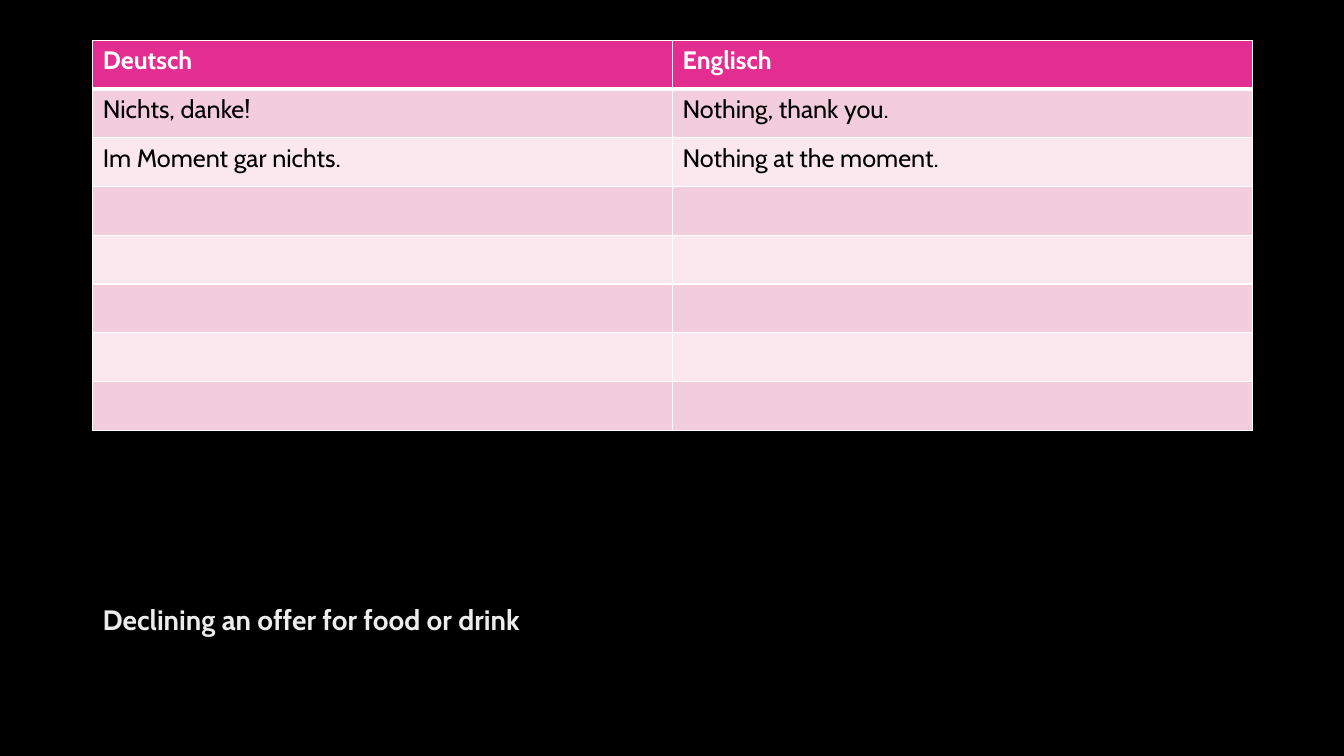
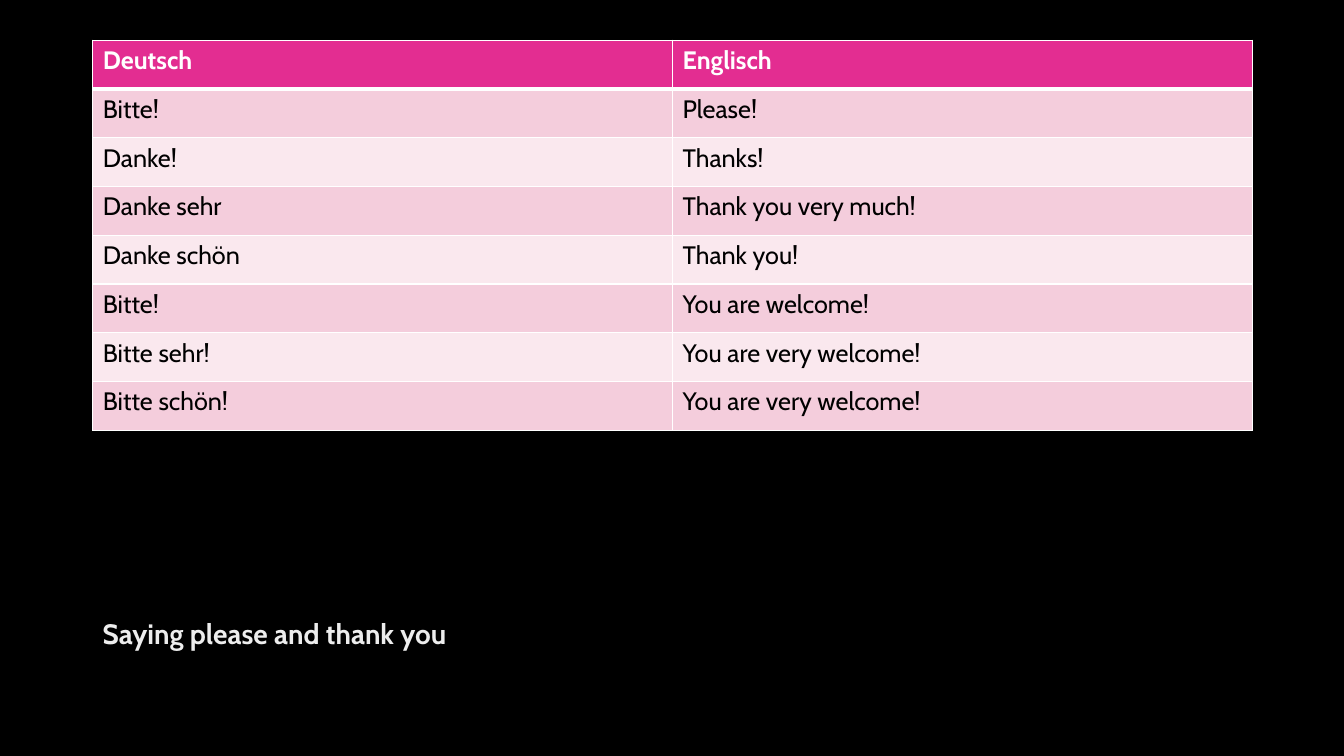
from dataclasses import dataclass

from lxml import etree
from pptx import Presentation
from pptx.dml.color import RGBColor
from pptx.enum.text import MSO_ANCHOR
from pptx.oxml.ns import qn
from pptx.slide import Slide
from pptx.table import _Cell
from pptx.util import Inches, Pt

MIDDLE = MSO_ANCHOR.MIDDLE
FONT = "Cabin"
HUES = {
    "back": "000000", "head": "E32D91", "odd": "F4CDDC", "even": "FAE8EE",
    "light": "FFFFFF", "dark": "000000",
}
FADE = ((0, "DEDEDE"), (34, "EDEDED"), (100, "FFFFFF"))
ANGLE = 80

# Shared grid, in inches
WIDE, HIGH = 13.33, 7.5
LEFT, TOP = 0.92, 0.4
SPAN, DEPTH = 11.5, 3.87
COLS, ROWS = 2, 8
BAND = 0.5
HEAD = ("Deutsch", "Englisch")


@dataclass(frozen=True)
class Lesson:
    title: str
    mid: float  # centre line of the title
    pairs: tuple[tuple[str, str], ...]


LESSONS = (
    Lesson("Declining an offer for food or drink", 6.17, (
        ("Nichts, danke!", "Nothing, thank you."),
        ("Im Moment gar nichts.", "Nothing at the moment."),
    )),
    Lesson("Saying please and thank you", 6.3, (
        ("Bitte!", "Please!"),
        ("Danke!", "Thanks!"),
        ("Danke sehr", "Thank you very much!"),
        ("Danke schön", "Thank you!"),
        ("Bitte!", "You are welcome!"),
        ("Bitte sehr!", "You are very welcome!"),
        ("Bitte schön!", "You are very welcome!"),
    )),
)


def rgb(name: str) -> RGBColor:
    return RGBColor.from_string(HUES[name])


def add_hue(node: etree._Element, code: str) -> None:
    etree.SubElement(node, qn("a:srgbClr"), val=code)


def edge(cell: _Cell, row: int) -> None:
    """Draw white borders, with a heavy rule under the header."""
    props = cell._tc.get_or_add_tcPr()
    sizes = {"L": 1, "R": 1, "T": 3 if row == 1 else 1, "B": 3 if row == 0 else 1}
    for spot, (side, size) in enumerate(sizes.items()):
        line = etree.Element(qn(f"a:ln{side}"), w=str(Pt(size)))
        add_hue(etree.SubElement(line, qn("a:solidFill")), HUES["light"])
        props.insert(spot, line)


def add_grid(slide: Slide, lesson: Lesson) -> None:
    grid = slide.shapes.add_table(
        ROWS, COLS, Inches(LEFT), Inches(TOP), Inches(SPAN), Inches(DEPTH)
    ).table
    lines = (HEAD, *lesson.pairs)
    for row in range(ROWS):
        texts = lines[row] if row < len(lines) else ("",) * COLS
        tone = "head" if row == 0 else "odd" if row % 2 else "even"
        for col, text in enumerate(texts):
            cell = grid.cell(row, col)
            cell.fill.solid()
            cell.fill.fore_color.rgb = rgb(tone)
            edge(cell, row)
            cell.text = text
            font = cell.text_frame.paragraphs[0].font
            font.name, font.size, font.bold = FONT, Pt(18), row == 0
            font.color.rgb = rgb("dark" if row else "light")


def add_title(slide: Slide, lesson: Lesson) -> None:
    box = slide.shapes.add_textbox(
        Inches(LEFT), Inches(lesson.mid - BAND / 2), Inches(SPAN), Inches(BAND)
    )
    frame = box.text_frame
    frame.word_wrap = True
    frame.vertical_anchor = MIDDLE
    para = frame.paragraphs[0]
    para.line_spacing = 0.9
    para.font.name, para.font.size, para.font.bold = FONT, Pt(20), True
    run = para.add_run()
    run.text = lesson.title
    # Gradient lettering
    fill = etree.Element(qn("a:gradFill"))
    stops = etree.SubElement(fill, qn("a:gsLst"))
    for share, code in FADE:
        add_hue(etree.SubElement(stops, qn("a:gs"), pos=str(share * 1000)), code)
    etree.SubElement(fill, qn("a:lin"), ang=str(ANGLE * 60000), scaled="0")
    run._r.get_or_add_rPr().insert(0, fill)


def main() -> None:
    deck = Presentation()
    deck.slide_width, deck.slide_height = Inches(WIDE), Inches(HIGH)
    blank = deck.slide_layouts[6]
    # Shared black background
    back = deck.slide_master.background.fill
    back.solid()
    back.fore_color.rgb = rgb("back")
    for lesson in LESSONS:
        slide = deck.slides.add_slide(blank)
        add_title(slide, lesson)
        add_grid(slide, lesson)
    deck.save("out.pptx")


if __name__ == "__main__":
    main()
